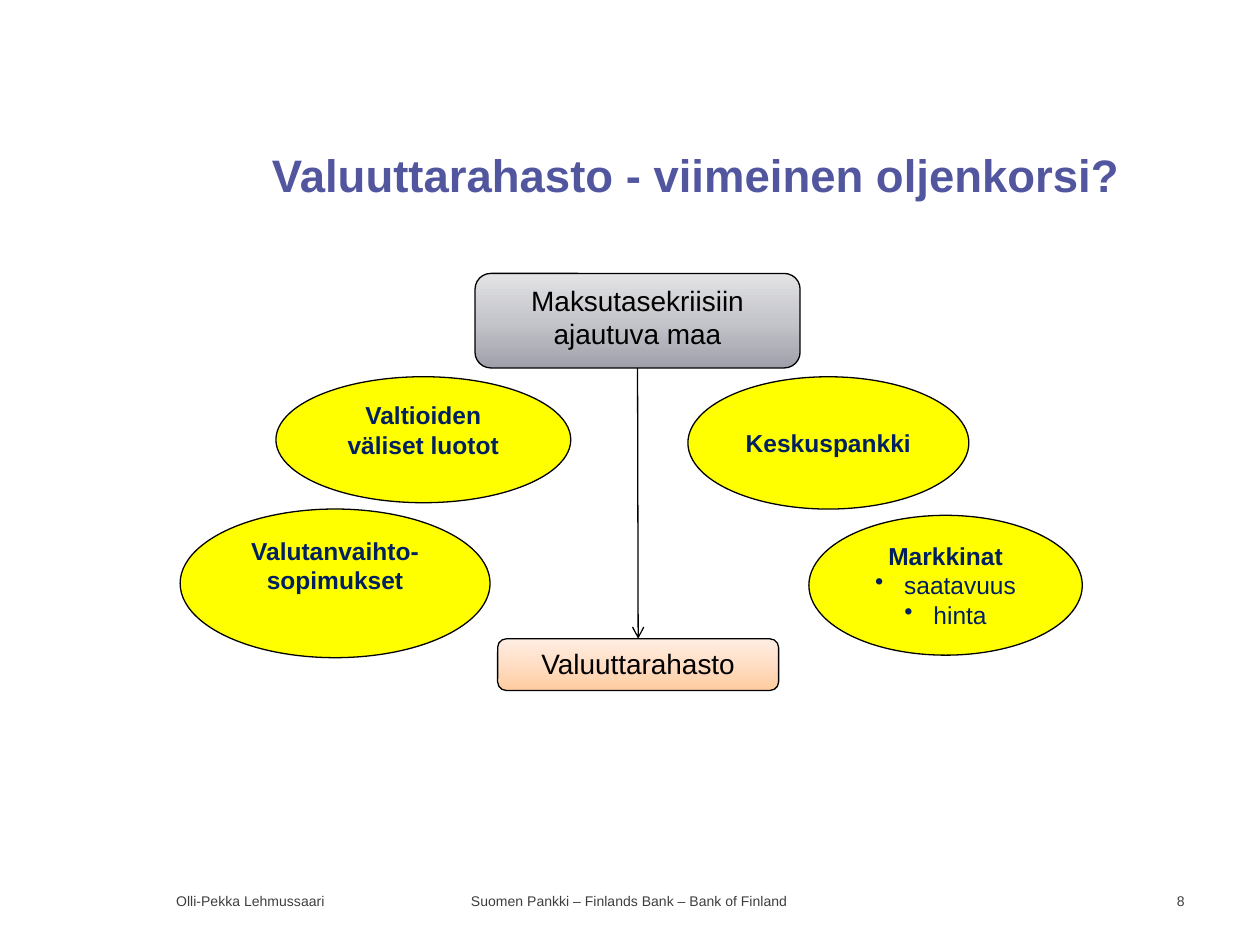
"""Build the slide on the monetary fund as the last resort of a country in crisis."""
from copy import deepcopy

from lxml import etree
from pptx import Presentation
from pptx.dml.color import RGBColor
from pptx.enum import shapes, text
from pptx.oxml import ns
from pptx.util import Inches, Pt

INK, NAVY = RGBColor(0, 0, 0), RGBColor(0x00, 0x20, 0x60)
TITLE, FOOTER = RGBColor(0x51, 0x56, 0x9E), RGBColor(0x3F, 0x3E, 0x3E)
YELLOW = RGBColor(0xFF, 0xFF, 0x00)
GREYS = [RGBColor.from_string(c) for c in ("9FA0AA", "C5C6CB", "E3E3E5")]
PEACHES = [RGBColor.from_string(c) for c in ("FFCC9F", "FFDEC5", "FFEEE3")]

TOP, MIDDLE, BOTTOM = (text.MSO_ANCHOR.TOP, text.MSO_ANCHOR.MIDDLE,
                       text.MSO_ANCHOR.BOTTOM)
LEFT, CENTER, RIGHT = text.PP_ALIGN.LEFT, text.PP_ALIGN.CENTER, text.PP_ALIGN.RIGHT
FORMATS = {
    "title": {"size": Pt(26), "bold": True, "color": TITLE},
    "footer": {"size": Pt(8), "bold": False, "color": FOOTER},
    "source": {"size": Pt(14), "bold": True, "color": NAVY},
    "detail": {"size": Pt(14), "bold": False, "color": NAVY},
    "party": {"size": Pt(16), "bold": False, "color": INK},
}

LABELS = [
    ("Valuuttarahasto - viimeinen oljenkorsi?", (2.06, 0.4, 7.16, 1.25),
     "title", LEFT, BOTTOM),
    ("Olli-Pekka Lehmussaari", (1.3, 6.95, 2.11, 0.4), "footer", LEFT, MIDDLE),
    ("Suomen Pankki – Finlands Bank – Bank of Finland", (3.53, 6.95, 2.93, 0.4),
     "footer", CENTER, MIDDLE),
    ("8", (8.93, 6.95, 0.57, 0.4), "footer", RIGHT, MIDDLE),
]
SOURCES = [
    ("Valutanvaihto-sopimukset", [], (1.43, 4.04, 2.46, 1.18), TOP),
    ("Valtioiden väliset luotot", [], (2.19, 2.99, 2.34, 1), TOP),
    ("Keskuspankki", [], (5.46, 2.99, 2.23, 1.05), MIDDLE),
    ("Markkinat", ["saatavuus", "hinta"], (6.42, 4.09, 2.17, 1.11), TOP),
]
COUNTRY = ("Maksutasekriisiin ajautuva maa", (3.77, 2.17, 2.58, 0.75), GREYS)
FUND = ("Valuuttarahasto", (3.95, 5.07, 2.23, 0.41), PEACHES)


def write(paragraph, wording, style, align):
    paragraph.text = wording
    paragraph.alignment = align
    font = paragraph.runs[0].font
    font.name = "Arial"
    for key, value in FORMATS[style].items():
        if key == "color":
            font.color.rgb = value
        else:
            setattr(font, key, value)


def add_bullet(paragraph):
    properties = paragraph._p.get_or_add_pPr()
    properties.set("marL", str(Inches(0.23)))
    properties.set("indent", str(-Inches(0.23)))
    etree.SubElement(properties, ns.qn("a:buChar")).set("char", "•")


def add_label(slide, wording, place, style, align, anchor):
    frame = slide.shapes.add_textbox(*map(Inches, place)).text_frame
    frame.word_wrap = True
    frame.vertical_anchor = anchor
    write(frame.paragraphs[0], wording, style, align)


def add_node(slide, preset, place, wording, style, anchor=TOP):
    node = slide.shapes.add_shape(preset, *map(Inches, place))
    node.shadow.inherit = False
    node.line.color.rgb = INK
    node.line.width = Pt(0.75)
    frame = node.text_frame
    layout = {"margin_left": Inches(0.07), "margin_right": Inches(0.07),
              "margin_top": Inches(0.04), "margin_bottom": Inches(0.04),
              "word_wrap": True, "vertical_anchor": anchor}
    for key, value in layout.items():
        setattr(frame, key, value)
    write(frame.paragraphs[0], wording, style, CENTER)
    return node


def add_source(slide, wording, details, place, anchor):
    source = add_node(slide, shapes.MSO_SHAPE.OVAL, place, wording, "source", anchor)
    source.fill.solid()
    source.fill.fore_color.rgb = YELLOW
    for detail in details:
        paragraph = source.text_frame.add_paragraph()
        add_bullet(paragraph)
        write(paragraph, detail, "detail", CENTER)


def add_party(slide, wording, place, colors):
    party = add_node(slide, shapes.MSO_SHAPE.ROUNDED_RECTANGLE, place, wording, "party")
    party.fill.gradient()
    party.fill.gradient_angle = 90
    stop_list = party._element.spPr.find(ns.qn("a:gradFill")).find(ns.qn("a:gsLst"))
    stop_list.append(deepcopy(stop_list[0]))
    for index, (stop, color) in enumerate(zip(party.fill.gradient_stops, colors)):
        stop.position = index / (len(colors) - 1)
        stop.color.rgb = color
    return party


def add_arrow(slide, country, fund):
    arrow = slide.shapes.add_connector(shapes.MSO_CONNECTOR.STRAIGHT, 0, 0, 0, 0)
    arrow.begin_connect(fund, 0)
    arrow.end_connect(country, 2)
    arrow.line.color.rgb = INK
    arrow.line.width = Pt(0.75)
    etree.SubElement(arrow.line._get_or_add_ln(), ns.qn("a:headEnd")).set("type", "arrow")
    etree.SubElement(arrow._element.spPr, ns.qn("a:effectLst"))


def main():
    deck = Presentation()
    deck.slide_width, deck.slide_height = Inches(10), Inches(7.5)
    slide = deck.slides.add_slide(deck.slide_layouts[6])
    for label in LABELS:
        add_label(slide, *label)
    for source in SOURCES:
        add_source(slide, *source)
    add_arrow(slide, add_party(slide, *COUNTRY), add_party(slide, *FUND))
    deck.save("out.pptx")


if __name__ == "__main__":
    main()
